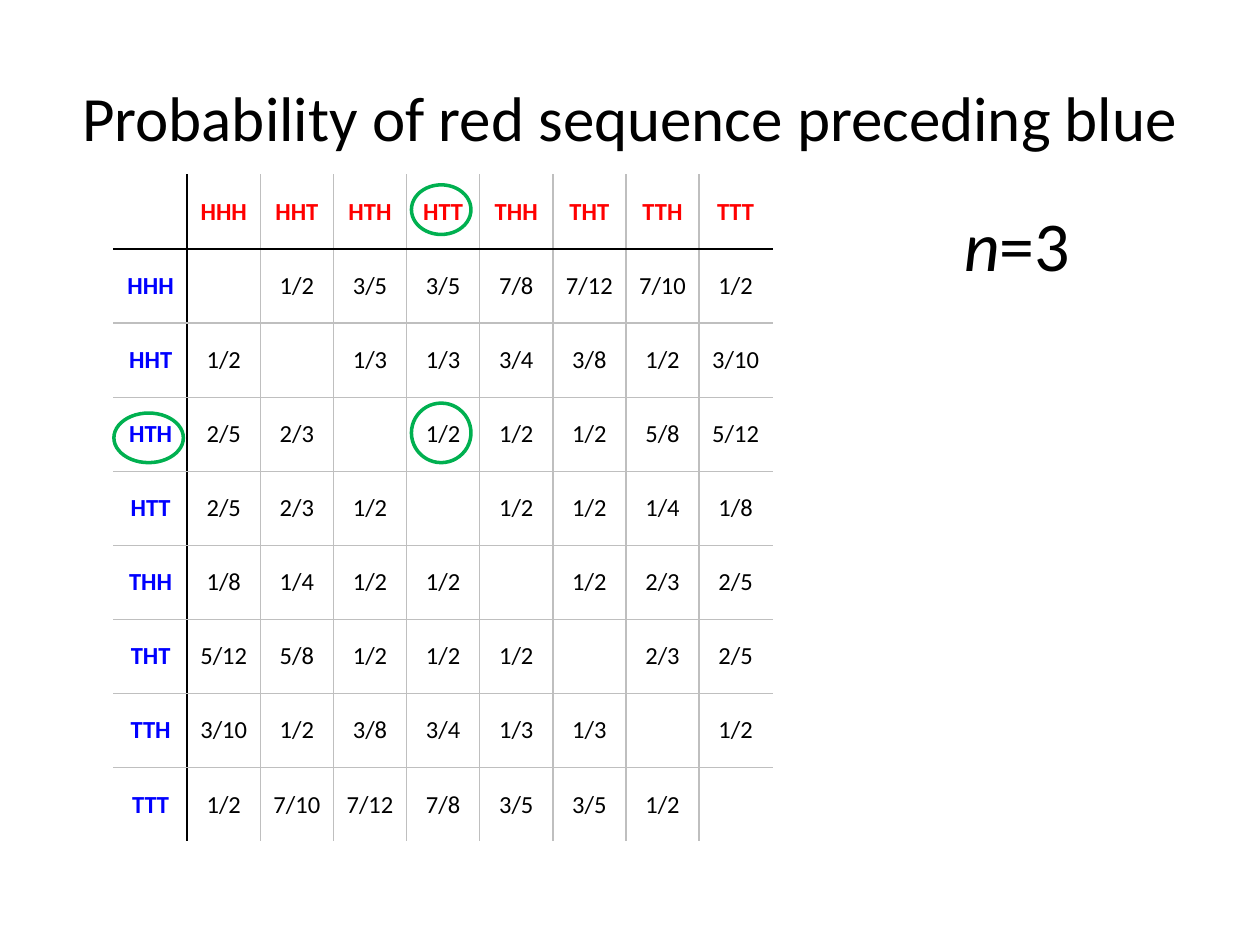
from collections import namedtuple
from dataclasses import dataclass

from lxml.etree import SubElement
from pptx import Presentation
from pptx.dml.color import RGBColor
from pptx.enum.shapes import MSO_SHAPE
from pptx.enum.text import MSO_ANCHOR, PP_ALIGN
from pptx.oxml import parse_xml
from pptx.oxml.ns import nsdecls, qn
from pptx.util import Cm, Pt

Box = namedtuple("Box", "left top width height")


@dataclass(frozen=True)
class Theme:
    font: str = "Calibri"
    ink: str = "000000"
    red: str = "FF0000"
    blue: str = "0000FF"
    ring: str = "00B050"
    grid: str = "BFBFBF"
    paper: str = "FFFFFF"
    title_size: int = 36
    label_size: int = 40
    cell_size: int = 14
    ring_width: int = 2
    border_width: int = 1


THEME = Theme()

SEQUENCES = ["HHH", "HHT", "HTH", "HTT", "THH", "THT", "TTH", "TTT"]
# One row per blue sequence; "-" marks a sequence against itself
ODDS = """
- 1/2 3/5 3/5 7/8 7/12 7/10 1/2
1/2 - 1/3 1/3 3/4 3/8 1/2 3/10
2/5 2/3 - 1/2 1/2 1/2 5/8 5/12
2/5 2/3 1/2 - 1/2 1/2 1/4 1/8
1/8 1/4 1/2 1/2 - 1/2 2/3 2/5
5/12 5/8 1/2 1/2 1/2 - 2/3 2/5
3/10 1/2 3/8 3/4 1/3 1/3 - 1/2
1/2 7/10 7/12 7/8 3/5 3/5 1/2 -
"""
COUNT = len(SEQUENCES) + 1


def place(shape, box):
    shape.left, shape.top, shape.width, shape.height = map(Cm, box)


def add_span(para, text, size, color=THEME.ink, bold=False, italic=False):
    para.alignment = PP_ALIGN.CENTER
    span = para.add_run()
    span.text = text
    span.font.name = THEME.font
    span.font.size = Pt(size)
    span.font.bold = bold
    span.font.italic = italic
    span.font.color.rgb = RGBColor.from_string(color)


def add_title(page, box):
    title = page.shapes.title
    place(title, box)
    frame = title.text_frame
    frame.vertical_anchor = MSO_ANCHOR.MIDDLE
    frame.margin_left = frame.margin_right = 0
    add_span(frame.paragraphs[0], "Probability of red sequence preceding blue",
             THEME.title_size)


def line_color(index):
    """Outer lines vanish, the line after the headings is dark."""
    if index in (0, COUNT):
        return THEME.paper
    return THEME.ink if index == 1 else THEME.grid


def set_borders(cell, row, column):
    properties = cell._tc.get_or_add_tcPr()
    edges = {"lnL": column, "lnR": column + 1, "lnT": row, "lnB": row + 1}
    for position, (tag, index) in enumerate(edges.items()):
        line = parse_xml(f'<a:{tag} {nsdecls("a")}/>')
        line.set("w", str(Pt(THEME.border_width)))
        fill = SubElement(line, qn("a:solidFill"))
        SubElement(fill, qn("a:srgbClr")).set("val", line_color(index))
        properties.insert(position, line)


def add_odds_table(page, box):
    table = page.shapes.add_table(COUNT, COUNT, *map(Cm, box)).table
    table.first_row = table.horz_banding = False
    for column in table.columns:
        column.width = Cm(box.width / COUNT)
    for row in table.rows:
        row.height = Cm(box.height / COUNT)

    odds = [line.split() for line in ODDS.strip().splitlines()]
    grid = [["-"] + SEQUENCES]
    grid += [[name] + values for name, values in zip(SEQUENCES, odds)]
    for r, texts in enumerate(grid):
        for c, text in enumerate(texts):
            cell = table.cell(r, c)
            cell.fill.background()
            cell.vertical_anchor = MSO_ANCHOR.MIDDLE
            cell.margin_left = cell.margin_right = 0
            set_borders(cell, r, c)
            if text != "-":
                color = THEME.red if r == 0 else THEME.blue if c == 0 else THEME.ink
                add_span(cell.text_frame.paragraphs[0], text, THEME.cell_size,
                         color, bold=r == 0 or c == 0)


def add_ring(page, table_box, row, column, width, height, shift):
    """Ring a table cell, shifted vertically from its middle."""
    middle = table_box.left + (column + 0.5) * table_box.width / COUNT - 0.04
    centre = table_box.top + (row + 0.5) * table_box.height / COUNT + shift
    box = Box(middle - width / 2, centre - height / 2, width, height)
    ring = page.shapes.add_shape(MSO_SHAPE.OVAL, *map(Cm, box))
    ring.shadow.inherit = False
    ring.fill.background()
    ring.line.color.rgb = RGBColor.from_string(THEME.ring)
    ring.line.width = Pt(THEME.ring_width)


def add_length_label(page, box):
    label = page.shapes.add_textbox(*map(Cm, box))
    label.text_frame.word_wrap = True
    para = label.text_frame.paragraphs[0]
    add_span(para, "n", THEME.label_size, italic=True)
    add_span(para, "=3", THEME.label_size)


def main():
    deck = Presentation()
    deck.slide_width, deck.slide_height = Cm(25.4), Cm(19.05)
    page = deck.slides.add_slide(deck.slide_layouts[5])

    add_title(page, Box(1.27, 0.76, 22.86, 3.18))
    table_box = Box(2.3, 3.53, 13.27, 13.44)
    add_odds_table(page, table_box)
    add_length_label(page, Box(17.9, 3.94, 5.2, 1.96))

    # Rings on the blue heading, the shared cell and the red heading
    add_ring(page, table_box, 3, 0, 1.4, 1, 0.07)
    add_ring(page, table_box, 3, 4, 1.2, 1.2, -0.03)
    add_ring(page, table_box, 0, 4, 1.2, 1, -0.05)

    deck.save("out.pptx")


if __name__ == "__main__":
    main()
